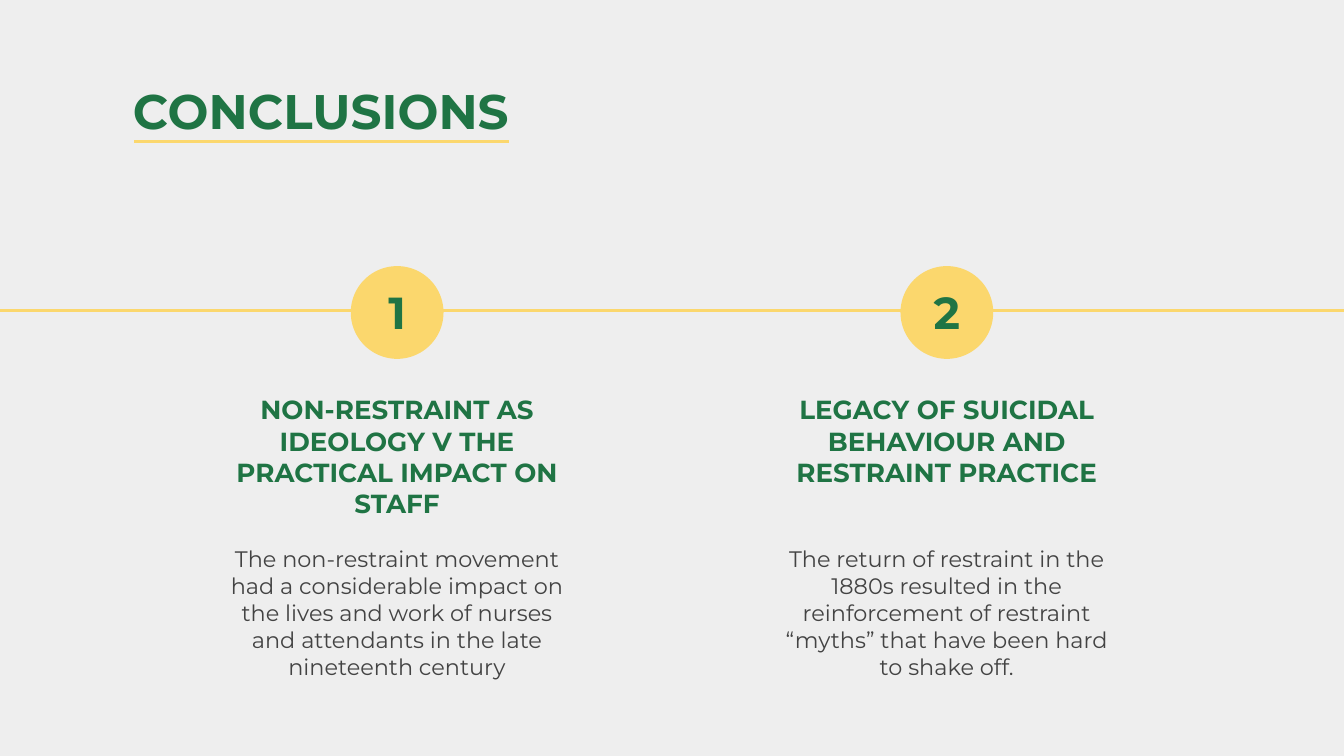
from typing import NamedTuple

from lxml import etree
from pptx import Presentation
from pptx import util as u
from pptx.dml.color import RGBColor
from pptx.enum import shapes, text
from pptx.oxml.ns import qn

GREEN = RGBColor(0x1F, 0x74, 0x44)
GOLD = RGBColor(0xFB, 0xD7, 0x6D)
GREY = RGBColor(0x43, 0x43, 0x43)
PALE = RGBColor(0xEE, 0xEE, 0xEE)
FONT = "Montserrat"
LEFT, STEP, WIDE = 1.59, 4.09, 2.73
DISC, BADGE = 0.69, 1.85


class Point(NamedTuple):
    num: str
    head: str
    body: str


POINTS = [
    Point(
        "1",
        "NON-RESTRAINT AS IDEOLOGY V THE PRACTICAL IMPACT ON STAFF",
        "The non-restraint movement had a considerable impact on the lives "
        "and work of nurses and attendants in the late nineteenth century",
    ),
    Point(
        "2",
        "LEGACY OF SUICIDAL BEHAVIOUR AND RESTRAINT PRACTICE",
        "The return of restraint in the 1880s resulted in the reinforcement "
        "of restraint “myths” that have been hard to shake off.",
    ),
]


def write(slide, words: str, x: float, y: float, w: float, h: float, *,
          size: float, color: RGBColor = GREEN, bold: bool = True,
          align=text.PP_ALIGN.CENTER, anchor=text.MSO_ANCHOR.TOP) -> None:
    box = slide.shapes.add_textbox(u.Inches(x), u.Inches(y), u.Inches(w), u.Inches(h))
    frame = box.text_frame
    frame.word_wrap = True
    frame.vertical_anchor = anchor
    frame.margin_left = frame.margin_right = u.Inches(0.1)
    frame.margin_top = frame.margin_bottom = u.Inches(0.1)
    para = frame.paragraphs[0]
    para.alignment = align
    run = para.add_run()
    run.text = words
    run.font.name = FONT
    run.font.size = u.Pt(size)
    run.font.bold = bold
    run.font.color.rgb = color


def rule(slide, start: float, end: float, y: float) -> None:
    line = slide.shapes.add_connector(
        shapes.MSO_CONNECTOR.STRAIGHT,
        u.Inches(start), u.Inches(y), u.Inches(end), u.Inches(y))
    line.line.color.rgb = GOLD
    line.line.width = u.Pt(1.5)
    etree.SubElement(line._element.spPr, qn("a:effectLst"))


def disc(slide, x: float, y: float) -> None:
    dot = slide.shapes.add_shape(
        shapes.MSO_SHAPE.OVAL,
        u.Inches(x), u.Inches(y), u.Inches(DISC), u.Inches(DISC))
    dot.shadow.inherit = False
    dot.fill.solid()
    dot.fill.fore_color.rgb = GOLD
    dot.line.fill.background()


def column(slide, point: Point, x: float) -> None:
    disc(slide, x + (WIDE - DISC) / 2, 1.98)
    write(slide, point.num, x + (WIDE - BADGE) / 2, 2.04, BADGE, 0.55,
          size=24, anchor=text.MSO_ANCHOR.MIDDLE)
    write(slide, point.head, x, 2.83, WIDE, 0.63, size=14)
    write(slide, point.body, x, 3.96, WIDE, 0.87, size=12, color=GREY, bold=False)


def main() -> None:
    deck = Presentation()
    deck.slide_width = u.Inches(10)
    deck.slide_height = deck.slide_width * 9 // 16
    slide = deck.slides.add_slide(deck.slide_layouts[6])
    slide.background.fill.solid()
    slide.background.fill.fore_color.rgb = PALE

    rule(slide, -0.09, 10.09, 2.31)
    write(slide, "CONCLUSIONS", 0.89, 0.5, 8.21, 0.63, size=26,
          align=text.PP_ALIGN.LEFT)
    rule(slide, 1, 3.79, 1.05)
    for i, point in enumerate(POINTS):
        column(slide, point, LEFT + i * STEP)

    deck.save("out.pptx")


if __name__ == "__main__":
    main()
